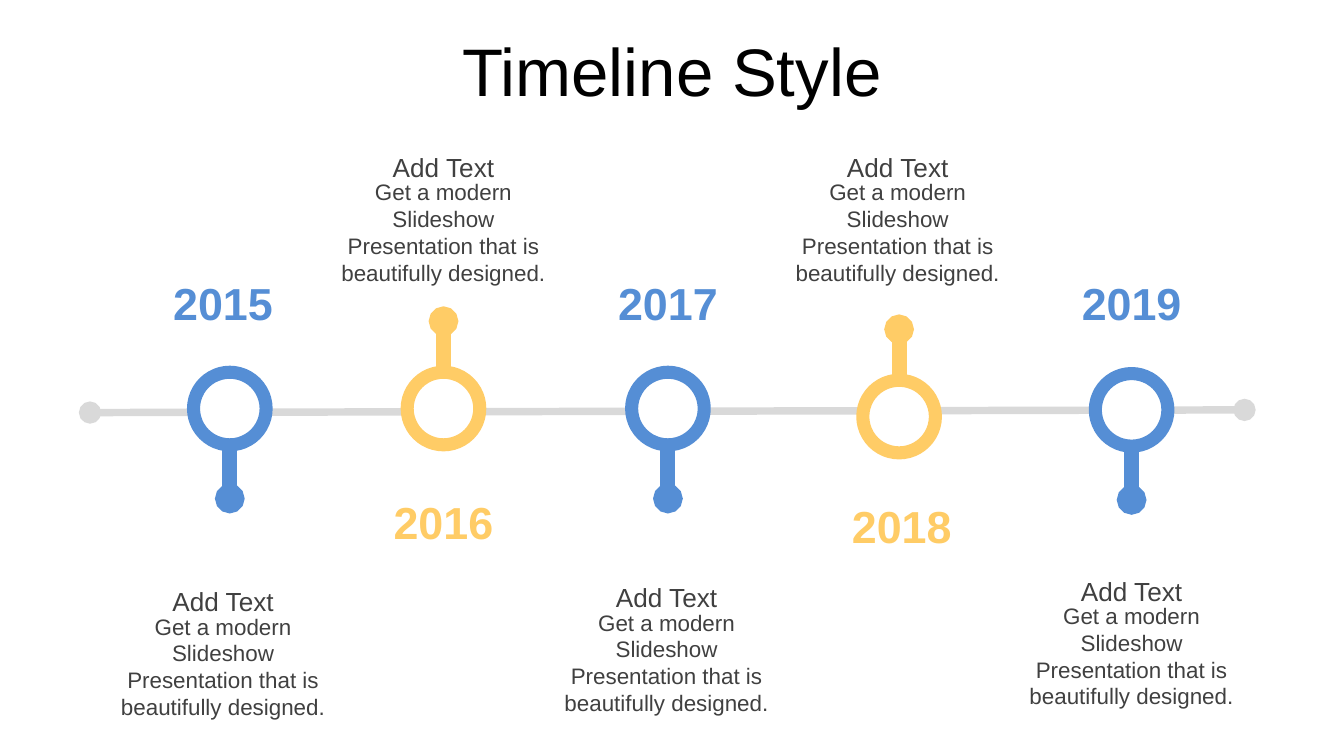
"""Build a five-year timeline slide."""
from dataclasses import dataclass

from pptx import Presentation
from pptx import util as u
from pptx.dml.color import RGBColor
from pptx.enum import shapes, text
from pptx.oxml.ns import qn
from lxml import etree


@dataclass(frozen=True)
class Theme:
    font: str = "Arial"
    ink: str = "000000"
    gray: str = "404040"
    axis: str = "D9D9D9"
    white: str = "FFFFFF"
    blue: str = "558ED5"
    yellow: str = "FFCC66"
    title: int = 36
    year: int = 24
    heading: int = 14
    body: int = 12


class Deck:
    def __init__(self, prs, theme):
        self.theme = theme
        self.s = prs.slides.add_slide(prs.slide_layouts[6])

    def text(self, box, words, size, color, bold=False, middle=False, grow=True, before=0):
        tf = self.s.shapes.add_textbox(*map(u.Inches, box)).text_frame
        anchor = text.MSO_ANCHOR.MIDDLE if middle else text.MSO_ANCHOR.TOP
        fit = text.MSO_AUTO_SIZE.SHAPE_TO_FIT_TEXT if grow else text.MSO_AUTO_SIZE.NONE
        p = tf.paragraphs[0]
        r = p.add_run()
        r.text = words
        formats = (
            (tf, {"word_wrap": True, "vertical_anchor": anchor, "auto_size": fit}),
            (p, {"alignment": text.PP_ALIGN.CENTER, "space_before": u.Pt(before)}),
            (r.font, {"name": self.theme.font, "size": u.Pt(size), "bold": bold}),
        )
        for target, values in formats:
            for name, value in values.items():
                setattr(target, name, value)
        r.font.color.rgb = RGBColor.from_string(color)

    def line(self, start, end, color, width, cap="med"):
        ends = map(u.Inches, (*start, *end))
        cn = self.s.shapes.add_connector(shapes.MSO_CONNECTOR.STRAIGHT, *ends)
        cn.line.color.rgb = RGBColor.from_string(color)
        cn.line.width = u.Pt(width)
        ln = cn.line._get_or_add_ln()
        for tag in ("a:headEnd", "a:tailEnd"):
            etree.SubElement(ln, qn(tag), type="oval", w=cap, len=cap)
        etree.SubElement(cn._element.spPr, qn("a:effectLst"))

    def ring(self, cx, cy, size, color, width):
        box = (cx - size / 2, cy - size / 2, size, size)
        sp = self.s.shapes.add_shape(shapes.MSO_SHAPE.OVAL, *map(u.Inches, box))
        sp.shadow.inherit = False
        sp.fill.solid()
        sp.fill.fore_color.rgb = RGBColor.from_string(self.theme.white)
        sp.line.color.rgb = RGBColor.from_string(color)
        sp.line.width = u.Pt(width)

    def pin(self, cx, cy, reach, color):
        self.line((cx, cy + reach), (cx, cy), color, 8, cap="sm")
        self.ring(cx, cy, 0.54, color, 7)

    def year(self, cx, y, words, color):
        self.text((cx - 0.63, y, 1.26, 0.5), words, self.theme.year, color, bold=True, middle=True)

    def caption(self, cx, y, heading, body):
        t = self.theme
        self.text((cx - 0.87, y, 1.74, 0.25), heading, t.heading, t.gray)
        self.text((cx - 0.87, y + 0.2, 1.74, 0.53), body, t.body, t.gray)


def main():
    prs = Presentation()
    prs.slide_width, prs.slide_height = u.Inches(10), u.Inches(10 * 9 / 16)
    t = Theme()
    deck = Deck(prs, t)
    deck.text((0, 0.2, 10, 0.63), "Timeline Style", t.title, t.ink,
              middle=True, grow=False, before=7.2)
    deck.line((0.67, 3.07), (9.26, 3.05), t.axis, 4)

    below, above = (0.67, t.blue), (-0.65, t.yellow)
    milestones = (
        ("2015", below, (1.71, 3.04), (1.66, 2), (1.66, 4.31)),
        ("2016", above, (3.3, 3.04), (3.3, 3.63), (3.3, 1.08)),
        ("2017", below, (4.97, 3.04), (4.97, 2), (4.96, 4.28)),
        ("2018", above, (6.69, 3.1), (6.71, 3.66), (6.68, 1.08)),
        ("2019", below, (8.42, 3.05), (8.42, 2), (8.42, 4.23)),
    )
    body = "Get a modern Slideshow Presentation that is beautifully designed."
    for year, (reach, color), pin_at, year_at, caption_at in milestones:
        deck.pin(*pin_at, reach, color)
        deck.year(*year_at, year, color)
        deck.caption(*caption_at, "Add Text", body)
    prs.save("out.pptx")


if __name__ == "__main__":
    main()
